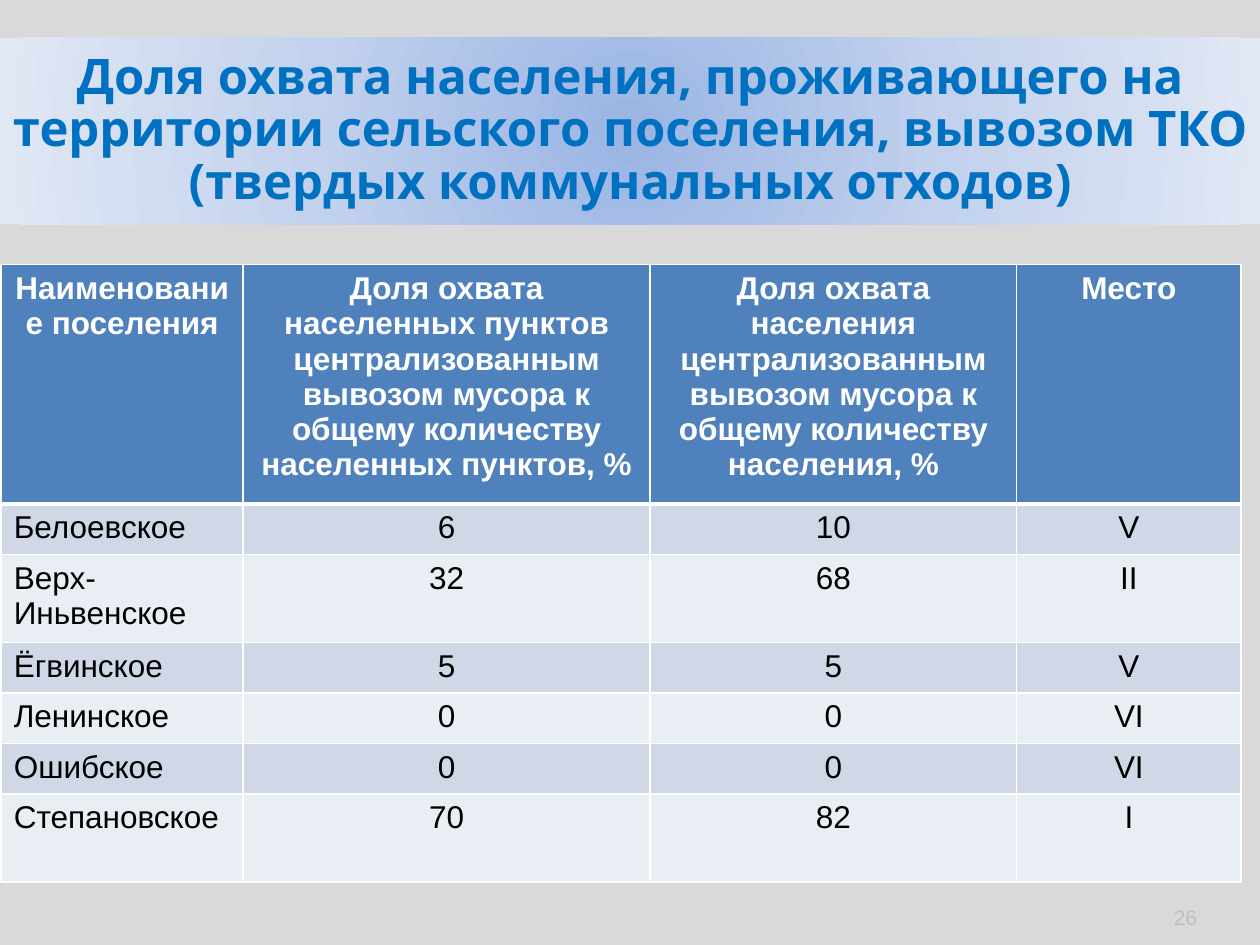
from lxml import etree
from pptx import Presentation
from pptx import util as u
from pptx.dml.color import RGBColor
from pptx.enum import text
from pptx.oxml import parse_xml
from pptx.oxml.ns import nsdecls, qn

WIDTH, HEIGHT = 10, 7.5
CENTER, LEFT, RIGHT = text.PP_ALIGN.CENTER, text.PP_ALIGN.LEFT, text.PP_ALIGN.RIGHT
COLUMNS = [1.92, 3.23, 2.91, 1.78]
ROWS = [1.9, 0.4, 0.7, 0.4, 0.4, 0.4, 0.7]
HEADER_FILL, BAND_FILLS = "4F81BD", ["D0D8E8", "E9EDF4"]
SETTLEMENTS = [
    ["Наименование поселения",
     "Доля охвата населенных пунктов централизованным вывозом мусора "
     "к общему количеству населенных пунктов, %",
     "Доля охвата населения централизованным вывозом мусора "
     "к общему количеству населения, %",
     "Место"],
    ["Белоевское", "6", "10", "V"],
    ["Верх-Иньвенское", "32", "68", "II"],
    ["Ёгвинское", "5", "5", "V"],
    ["Ленинское", "0", "0", "VI"],
    ["Ошибское", "0", "0", "VI"],
    ["Степановское", "70", "82", "I"],
]


def color(value):
    return RGBColor.from_string(value)


def paint(fill, value):
    fill.solid()
    fill.fore_color.rgb = color(value)


def place(shape, left, top, width, height):
    shape.left, shape.top = u.Inches(left), u.Inches(top)
    shape.width, shape.height = u.Inches(width), u.Inches(height)


def write(frame, words, size, value, bold=False, align=CENTER, font="Arial"):
    paragraph = frame.paragraphs[0]
    paragraph.alignment = align
    run = paragraph.add_run()
    run.text = words
    run.font.name, run.font.size, run.font.bold = font, u.Pt(size), bold
    run.font.color.rgb = color(value)
    return paragraph


def paint_radial(shape, stops):
    marks = "".join(
        f'<a:gs pos="{share * 1000}"><a:srgbClr val="{value}"/></a:gs>'
        for share, value in stops)
    gradient = parse_xml(
        f'<a:gradFill {nsdecls("a")} rotWithShape="1"><a:gsLst>{marks}</a:gsLst>'
        '<a:path path="circle"><a:fillToRect l="50000" t="50000" r="50000" b="50000"/>'
        '</a:path></a:gradFill>')
    shape.fill.background()
    properties = shape.element.spPr
    properties.replace(properties.find(qn("a:noFill")), gradient)


def add_title(slide, words):
    title = slide.shapes.title
    place(title, 0, 0.3, WIDTH, 1.48)
    paint_radial(title, [(0, "9AB5E4"), (50, "C2D1ED"), (100, "E1E8F5")])
    frame = title.text_frame
    frame.word_wrap = True
    frame.auto_size = text.MSO_AUTO_SIZE.NONE
    frame.vertical_anchor = text.MSO_ANCHOR.MIDDLE
    frame.margin_left = frame.margin_right = u.Inches(0.05)
    paragraph = write(frame, words, 28, "0070C0", True, font="Noto Sans")
    paragraph.line_spacing = 0.9


def set_borders(cell, bottom):
    properties = cell._tc.get_or_add_tcPr()
    widths = {"lnL": 1, "lnR": 1, "lnT": 1, "lnB": bottom}
    for index, (side, width) in enumerate(widths.items()):
        line = etree.Element(qn(f"a:{side}"), w=str(u.Pt(width)))
        fill = etree.SubElement(line, qn("a:solidFill"))
        etree.SubElement(fill, qn("a:srgbClr"), val="FFFFFF")
        properties.insert(index, line)


def fill_cell(cell, words, row, column):
    header = row == 0
    paint(cell.fill, HEADER_FILL if header else BAND_FILLS[(row - 1) % 2])
    set_borders(cell, 3 if header else 1)
    align = CENTER if header or column else LEFT
    write(cell.text_frame, words, 18, "FFFFFF" if header else "000000", header, align)


def add_settlements(slide, left, top):
    frame = slide.shapes.add_table(
        len(ROWS), len(COLUMNS), u.Inches(left), u.Inches(top),
        u.Inches(sum(COLUMNS)), u.Inches(sum(ROWS)))
    table = frame.table
    for column, width in zip(table.columns, COLUMNS):
        column.width = u.Inches(width)
    for row, height in zip(table.rows, ROWS):
        row.height = u.Inches(height)
    for row, values in enumerate(SETTLEMENTS):
        for column, words in enumerate(values):
            fill_cell(table.cell(row, column), words, row, column)


def add_page_number(slide, number):
    box = slide.shapes.add_textbox(0, 0, 0, 0)
    place(box, 0.85 * WIDTH, HEIGHT - 0.4, 0.11 * WIDTH, 0.36)
    frame = box.text_frame
    frame.word_wrap = True
    frame.vertical_anchor = text.MSO_ANCHOR.MIDDLE
    write(frame, number, 12, "BFBFBF", align=RIGHT)


def main():
    presentation = Presentation()
    presentation.slide_width = u.Inches(WIDTH)
    presentation.slide_height = u.Inches(HEIGHT)
    slide = presentation.slides.add_slide(presentation.slide_layouts[5])
    paint(slide.background.fill, "D9D9D9")
    add_title(slide, "Доля охвата населения, проживающего на территории сельского "
                     "поселения, вывозом ТКО (твердых коммунальных отходов)")
    add_settlements(slide, 0.01, 2.1)
    add_page_number(slide, "26")
    presentation.save("out.pptx")


if __name__ == "__main__":
    main()
